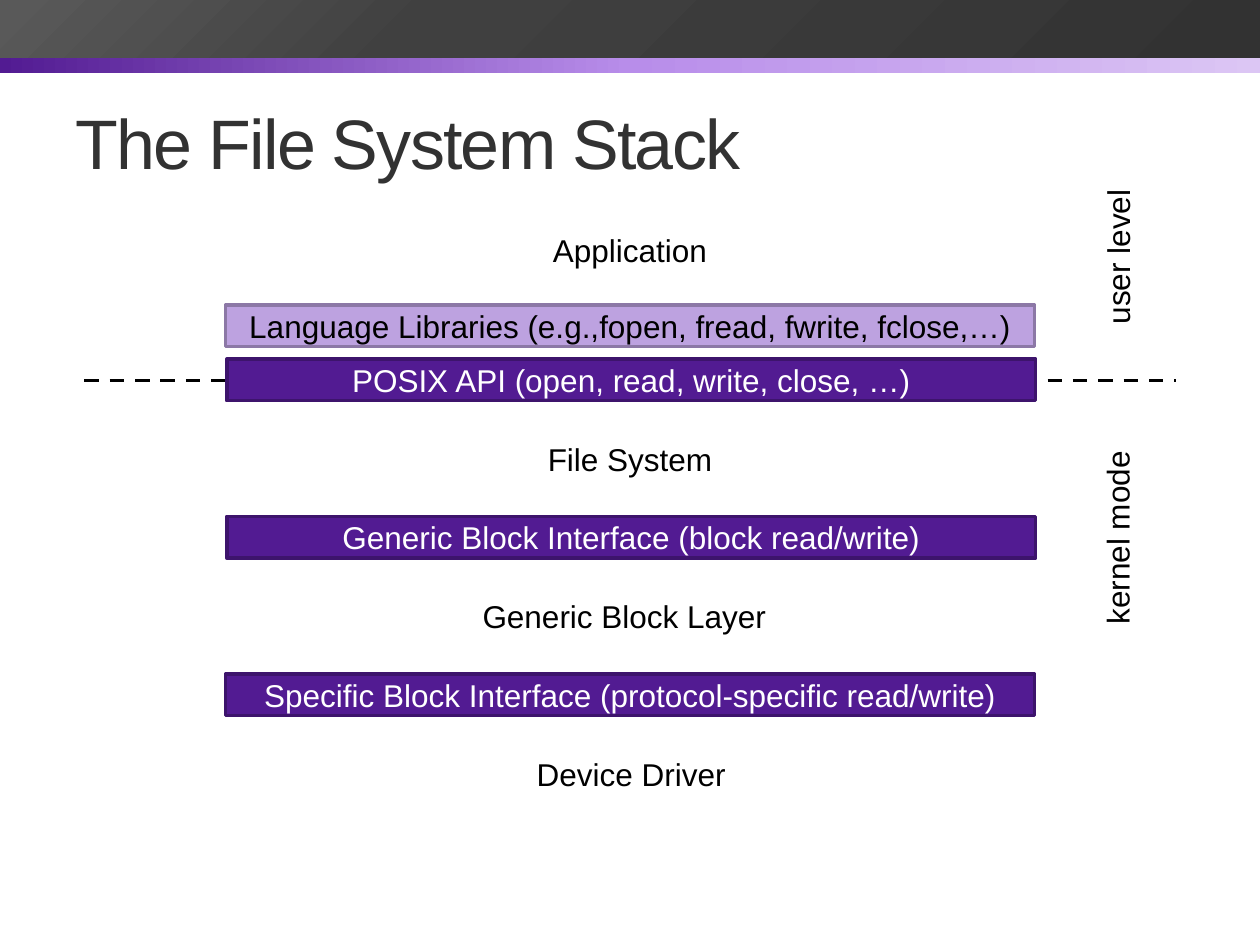
import copy

import pptx
import pptx.dml.color
import pptx.enum.dml
import pptx.enum.shapes
import pptx.enum.text
import pptx.oxml
import pptx.util

Inches, Pt = pptx.util.Inches, pptx.util.Pt
RGB = pptx.dml.color.RGBColor.from_string
ALIGN = pptx.enum.text.PP_ALIGN
MIDDLE = pptx.enum.text.MSO_ANCHOR.MIDDLE
RECT = pptx.enum.shapes.MSO_SHAPE.RECTANGLE

COLORS = {
    "ink": "323232",
    "black": "000000",
    "white": "FFFFFF",
    "purple": "521B92",
    "purple edge": "3D146C",
    "lilac": "BDA2E0",
    "lilac edge": "8C78A6",
}

deck = pptx.Presentation()
deck.slide_width, deck.slide_height = Inches(10), Inches(7.5)
slide = deck.slides.add_slide(deck.slide_layouts[5])
shapes = slide.shapes


def put_text(shape, text, color, size=18, align=ALIGN.CENTER):
    frame = shape.text_frame
    frame.text = text
    frame.vertical_anchor = MIDDLE
    para = frame.paragraphs[0]
    para.alignment = align
    para.font.name, para.font.size = "Arial", Pt(size)
    para.font.color.rgb = RGB(COLORS[color])


def add_rect(left, top, width, height):
    rect = shapes.add_shape(RECT, Inches(left), Inches(top), Inches(width), Inches(height))
    rect.shadow.inherit = False
    return rect


# Header bands: top, height, angle, three gradient stops
bands = [
    (0.24, 0.34, 0, [(0, "521B92"), (0.5, "B88DEA"), (1, "DCC6F4")]),
    (0, 0.46, 135, [(0, "323232"), (0.66, "404040"), (0.99, "595959")]),
]
for top, height, angle, stops in bands:
    band = add_rect(0, top, 10, height)
    band.line.fill.background()
    band.fill.gradient()
    band.fill.gradient_angle = angle
    first = band.element.xpath(".//a:gs")[0]
    first.addnext(copy.deepcopy(first))
    for stop, (place, color) in zip(band.fill.gradient_stops, stops):
        stop.position = place
        stop.color.rgb = RGB(color)

# Title
title = shapes.title
title.left, title.top = Inches(0.5), Inches(0.58)
title.width, title.height = Inches(9), Inches(1.08)
put_text(title, "The File System Stack", "ink", 40, ALIGN.LEFT)
title.text_frame.auto_size = pptx.enum.text.MSO_AUTO_SIZE.NONE
title.text_frame.paragraphs[0].runs[0].font._element.set("spc", "-100")

# Border between user level and kernel mode
border = shapes.add_connector(
    pptx.enum.shapes.MSO_CONNECTOR.STRAIGHT,
    Inches(0.67), Inches(3.02), Inches(9.33), Inches(3.02))
border.line.color.rgb = RGB(COLORS["black"])
border.line.width = Pt(2.08)
border.line.dash_style = pptx.enum.dml.MSO_LINE.DASH
border.element.spPr.append(pptx.oxml.parse_xml(
    '<a:effectLst xmlns:a="http://schemas.openxmlformats.org/drawingml/2006/main"/>'))

# Interfaces: left, top, fill, text colour, text
step = 1.25
faces = [
    (1.8, 2.85, "purple", "white", "POSIX API (open, read, write, close, …)"),
    (1.8, 2.85 + step, "purple", "white", "Generic Block Interface (block read/write)"),
    (1.79, 2.85 + 2 * step, "purple", "white",
     "Specific Block Interface (protocol-specific read/write)"),
    (1.79, 2.42, "lilac", "black",
     "Language Libraries (e.g.,fopen, fread, fwrite, fclose,…)"),
]
for left, top, fill, ink, text in faces:
    box = add_rect(left, top, 6.42, 0.33)
    box.fill.solid()
    box.fill.fore_color.rgb = RGB(COLORS[fill])
    box.line.color.rgb = RGB(COLORS[fill + " edge"])
    box.line.width = Pt(2.08)
    put_text(box, text, ink)

# Layers and modes: left, top, width, turn, text
labels = [
    (4.28, 1.78, 1.44, 0, "Application"),
    (8.23, 1.84, 1.28, 270, "user level"),
    (8.07, 4.07, 1.59, 270, "kernel mode"),
    (4.24, 3.44, 1.52, 0, "File System"),
    (3.72, 3.44 + step, 2.47, 0, "Generic Block Layer"),
    (4.15, 3.44 + 2 * step, 1.72, 0, "Device Driver"),
]
for left, top, width, turn, text in labels:
    label = shapes.add_textbox(Inches(left), Inches(top), Inches(width), Inches(0.4))
    label.rotation = turn
    label.text_frame.word_wrap = False
    put_text(label, text, "black")

deck.save("out.pptx")
